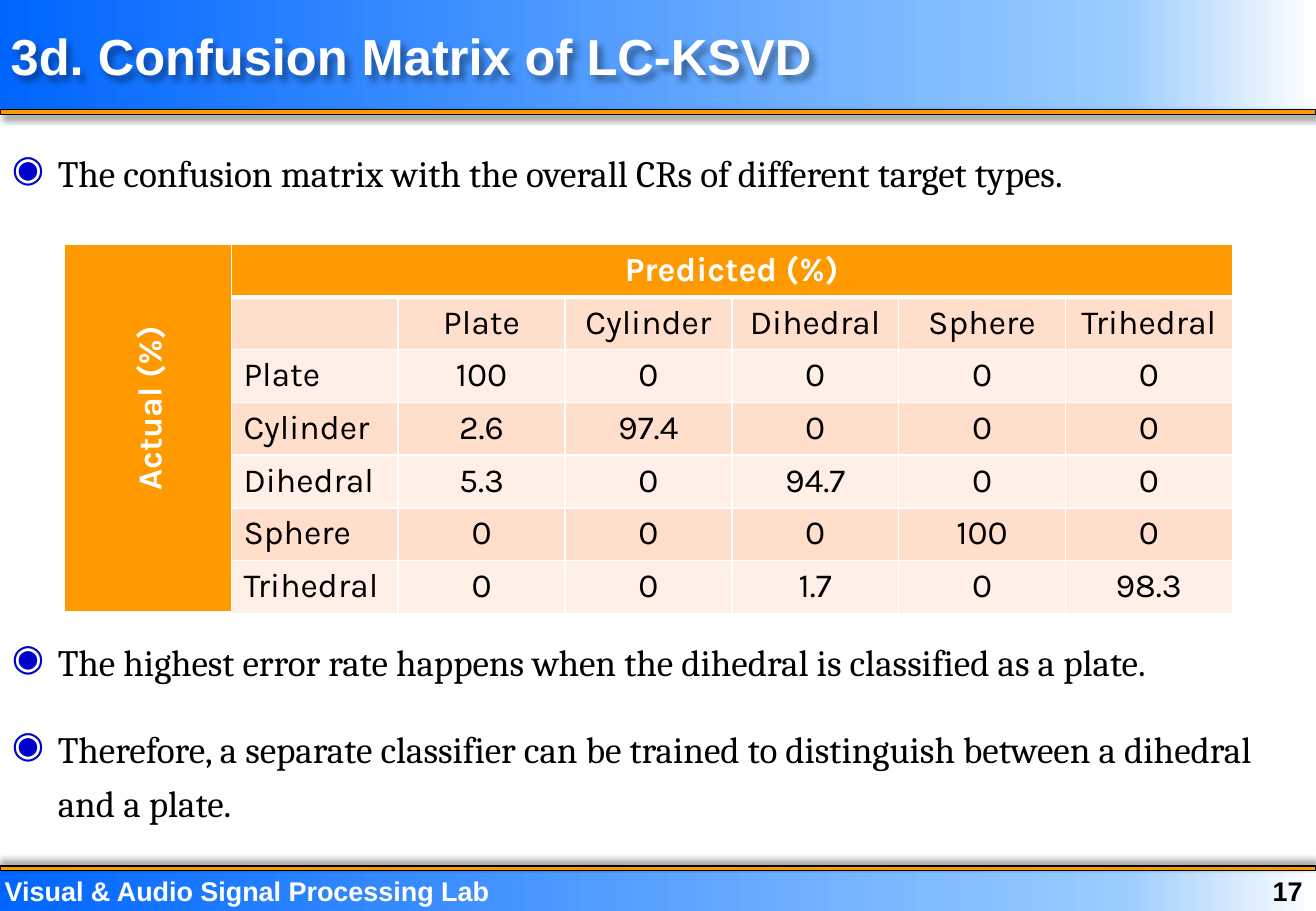
"""Build the confusion matrix slide of the LC-KSVD talk."""
from copy import deepcopy

from lxml.etree import SubElement as Sub
from pptx import Presentation
from pptx.dml.color import RGBColor
from pptx.enum.shapes import MSO_SHAPE as Kind
from pptx.enum.text import MSO_ANCHOR as Anchor, PP_ALIGN as Align
from pptx.oxml.ns import qn
from pptx.util import Cm, Pt

WHITE = RGBColor(0xFF, 0xFF, 0xFF)
BLACK = RGBColor(0, 0, 0)
BLUE = RGBColor(0x00, 0x66, 0xFF)
SKY = RGBColor(0x99, 0xCC, 0xFF)
NAVY = RGBColor(0x00, 0x00, 0xCC)
ORANGE = RGBColor(0xFF, 0x99, 0x00)
PEACH = RGBColor(0xFF, 0xDE, 0xCC)
CREAM = RGBColor(0xFF, 0xEF, 0xE7)
WIDE = Cm(27.51)


def style(para, name, size, color, bold=False, align=Align.LEFT):
    para.alignment = align
    for run in para.runs:
        font = run.font
        font.name, font.size, font.bold = name, Pt(size), bold
        font.color.rgb = color


def shade(shape, angle):
    shape.shadow.inherit = False
    effects = shape.element.spPr.find(qn("a:effectLst"))
    outer = Sub(effects, qn("a:outerShdw"), blurRad=str(Pt(4)), dist=str(Pt(3)),
                dir=str(angle * 60000), algn="tl", rotWithShape="0")
    black = Sub(outer, qn("a:srgbClr"), val=str(BLACK))
    Sub(black, qn("a:alpha"), val="40000")


deck = Presentation()
deck.slide_width, deck.slide_height = WIDE, Cm(19.05)
slide = deck.slides.add_slide(deck.slide_layouts[5])
shapes = slide.shapes

for top, height in ((18.21, 0.89), (0, 2.31)):
    band = shapes.add_shape(Kind.RECTANGLE, 0, Cm(top), WIDE, Cm(height))
    band.shadow.inherit = False
    band.line.fill.background()
    band.fill.gradient()
    band.fill.gradient_angle = 0
    stops = band.element.spPr.find(".//" + qn("a:gsLst"))
    stops.append(deepcopy(stops[1]))
    for stop, place, color in zip(band.fill.gradient_stops, (0, 0.85, 1), (BLUE, SKY, WHITE)):
        stop.position = place
        stop.color.rgb = color

for top, angle in ((18.11, 270), (2.29, 45)):
    rule = shapes.add_shape(Kind.RECTANGLE, 0, Cm(top), WIDE, Cm(0.1))
    rule.fill.solid()
    rule.fill.fore_color.rgb = ORANGE
    rule.line.color.rgb = BLACK
    rule.line.width = Pt(0.75)
    shade(rule, angle)

for left, width, text, color, align in (
    (0, 13.44, "Visual & Audio Signal Processing Lab", WHITE, Align.LEFT),
    (24.56, 2.67, "17", BLACK, Align.RIGHT),
):
    frame = shapes.add_textbox(Cm(left), Cm(18.29), Cm(width), Cm(0.76)).text_frame
    frame.word_wrap = True
    frame.margin_left = Cm(0.1)
    frame.margin_top = frame.margin_right = frame.margin_bottom = 0
    frame.text = text
    style(frame.paragraphs[0], "Arial", 16, color, True, align)

title = shapes.title
title.left, title.top, title.width, title.height = Cm(-0.03), Cm(0.2), WIDE, Cm(1.93)
title.text_frame.text = "3d. Confusion Matrix of LC-KSVD"
title.text_frame.vertical_anchor = Anchor.MIDDLE
style(title.text_frame.paragraphs[0], "Arial", 30, WHITE, True)
shade(title, 45)
title.element.getparent().append(title.element)

for top, height, lines in (
    (2.84, 1.5, ["The confusion matrix with the overall CRs of different target types."]),
    (13.06, 4.4, [
        "The highest error rate happens when the dihedral is classified as a plate.",
        "Therefore, a separate classifier can be trained to distinguish between a dihedral and a plate.",
    ]),
):
    frame = shapes.add_textbox(0, Cm(top), WIDE, Cm(height)).text_frame
    frame.word_wrap = True
    frame.text = "\n".join(lines)
    for para in frame.paragraphs:
        props = para._p.get_or_add_pPr()
        props.set("marL", str(Cm(0.96)))
        props.set("indent", str(Cm(-0.96)))
        Sub(Sub(props, qn("a:buClr")), qn("a:srgbClr"), val=str(NAVY))
        Sub(props, qn("a:buChar"), char="◉")
        para.line_spacing = 1.2
        para.space_after = Pt(20)
        style(para, "Cambria", 22, BLACK)

types = ["Plate", "Cylinder", "Dihedral", "Sphere", "Trihedral"]
rates = [
    ["100", "0", "0", "0", "0"],
    ["2.6", "97.4", "0", "0", "0"],
    ["5.3", "0", "94.7", "0", "0"],
    ["0", "0", "0", "100", "0"],
    ["0", "0", "1.7", "0", "98.3"],
]
rows = [["", "Predicted (%)", "", "", "", "", ""], ["", "", *types]]
rows += [["", kind, *rate] for kind, rate in zip(types, rates)]
size = len(rows)
table = shapes.add_table(size, size, Cm(1.35), Cm(5.11), Cm(24.41), Cm(7.28)).table
for r, row in enumerate(rows):
    for c, text in enumerate(row):
        cell = table.cell(r, c)
        head = r == 0 or c == 0
        props = cell._tc.get_or_add_tcPr()
        for side in "LRTB":
            thick = (side == "B" and r == 0) or (side == "T" and r == 1)
            line = Sub(props, qn("a:ln" + side), w=str(Pt(3 if thick else 1)))
            Sub(Sub(line, qn("a:solidFill")), qn("a:srgbClr"), val=str(WHITE))
        cell.fill.solid()
        cell.fill.fore_color.rgb = ORANGE if head else PEACH if r % 2 else CREAM
        if text:
            cell.text_frame.text = text
            align = Align.LEFT if c == 1 and r > 0 else Align.CENTER
            style(cell.text_frame.paragraphs[0], "Karla", 20, WHITE if head else BLACK, head, align)
table.cell(0, 0).merge(table.cell(size - 1, 0))
table.cell(0, 1).merge(table.cell(0, size - 1))

label = shapes.add_textbox(Cm(0.71), Cm(7.98), Cm(4.8), Cm(1.12))
label.rotation = 270
label.text_frame.word_wrap = True
label.text_frame.text = "Actual (%)"
style(label.text_frame.paragraphs[0], "Karla", 20, WHITE, True, Align.CENTER)

deck.save("out.pptx")
